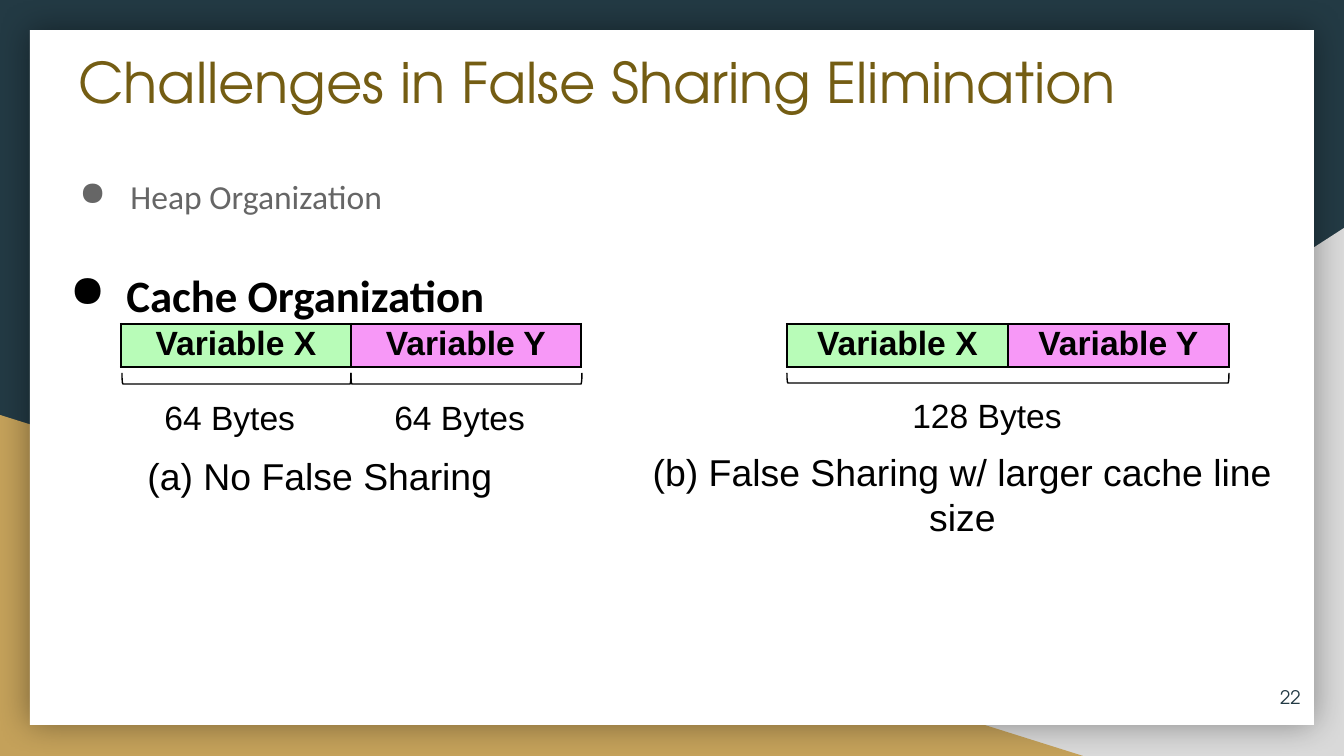
"""Build the slide on false sharing elimination and cache organization."""
import lxml.etree
import pptx
import pptx.dml.color
import pptx.enum.shapes
import pptx.enum.text
import pptx.oxml
import pptx.oxml.ns
import pptx.util

PX = 914400 / 134.4
SLIDE_SIZE = (1344, 756)
COLORS = {
    "navy": "233A44", "silver": "D9D9D9", "gold": "C4A15A", "white": "FFFFFF",
    "title": "745D13", "gray": "666666", "black": "000000",
    "green": "B8FCB8", "pink": "F798F7",
}
HEADING_FONT, BODY_FONT, DIAGRAM_FONT = "TeX Gyre Adventor", "Calibri", "Arial"
TITLE = ("Challenges in False Sharing Elimination", (65, 34, 1103, 95))
SLIDE_NUMBER = ("22", (1234, 668, 80, 58))
BULLETS = [
    ("Heap Organization", (50, 142, 410, 67), 18, "gray", False, 0.38),
    ("Cache Organization", (46, 227, 516, 82), 24, "black", True, 0.42),
]
VARIABLES = [("Variable X", "green"), ("Variable Y", "pink")]
TABLES = [(121, 324, 230), (787, 324, 221)]
ROW_HEIGHT = 36
BRACKETS = [(122, 373, 229, 11), (351, 373, 231, 11), (787, 373, 442, 10)]
LABELS = [
    ("128 Bytes", (911, 394, 194, 43), 18, "LEFT"),
    ("64 Bytes", (163, 396, 148, 43), 18, "LEFT"),
    ("64 Bytes", (393, 396, 148, 43), 18, "LEFT"),
    ("(a) No False Sharing", (112, 452, 416, 48), 20, "CENTER"),
    ("(b) False Sharing w/ larger cache line size", (621, 448, 683, 93), 20, "CENTER"),
]


def emu(*lengths):
    return [pptx.util.Emu(round(length * PX)) for length in lengths]


def rgb(color):
    return pptx.dml.color.RGBColor.from_string(COLORS[color])


def add_xml(parent, xml):
    element = pptx.oxml.parse_xml(xml.replace(">", f" {pptx.oxml.ns.nsdecls('a')}>", 1))
    parent.append(element)


def add_panel(slide, preset, box, color):
    shape = slide.shapes.add_shape(preset, *emu(*box))
    shape.shadow.inherit = False
    shape.fill.solid()
    shape.fill.fore_color.rgb = rgb(color)
    shape.line.fill.background()
    return shape


def style_text(paragraph, font, size, color, bold=False, align="LEFT"):
    paragraph.alignment = pptx.enum.text.PP_ALIGN[align]
    for run in paragraph.runs:
        run.font.name = font
        run.font.size = pptx.util.Pt(size)
        run.font.bold = bold
        run.font.color.rgb = rgb(color)


def set_margins(target, inches):
    margin = pptx.util.Inches(inches)
    target.margin_left = target.margin_right = margin
    target.margin_top = target.margin_bottom = margin


def add_text(slide, text, box, font, size, color, bold=False, align="LEFT", margin=0.1):
    text_frame = slide.shapes.add_textbox(*emu(*box)).text_frame
    text_frame.word_wrap = True
    set_margins(text_frame, margin)
    text_frame.text = text
    style_text(text_frame.paragraphs[0], font, size, color, bold, align)
    return text_frame


def add_bullet(slide, text, box, size, color, bold, hanging):
    paragraph = add_text(slide, text, box, BODY_FONT, size, color, bold).paragraphs[0]
    paragraph.line_spacing = 1.5
    properties = paragraph._p.get_or_add_pPr()
    properties.set("marL", str(pptx.util.Inches(0.5)))
    properties.set("indent", str(-pptx.util.Inches(hanging)))
    add_xml(properties, f'<a:buClr><a:srgbClr val="{COLORS[color]}"/></a:buClr>')
    add_xml(properties, '<a:buChar char="●"></a:buChar>')


def add_variable_table(slide, left, top, column_width):
    frame = slide.shapes.add_table(
        1, len(VARIABLES), *emu(left, top, column_width * len(VARIABLES), ROW_HEIGHT))
    for cell, (name, color) in zip(frame.table.iter_cells(), VARIABLES):
        cell.text = name
        style_text(cell.text_frame.paragraphs[0], DIAGRAM_FONT, 18, "black", True, "CENTER")
        set_margins(cell, 0.01)
        properties = cell._tc.get_or_add_tcPr()
        for side in ("lnL", "lnR", "lnT", "lnB"):
            add_xml(properties, f'<a:{side} w="{pptx.util.Pt(1.5)}"><a:solidFill>'
                                f'<a:srgbClr val="{COLORS["black"]}"/></a:solidFill></a:{side}>')
        cell.fill.solid()
        cell.fill.fore_color.rgb = rgb(color)


def add_bracket(slide, left, top, width, height):
    shift = (width - height) / 2
    shape = slide.shapes.add_shape(
        pptx.enum.shapes.MSO_SHAPE.LEFT_BRACKET, *emu(left + shift, top - shift, height, width))
    shape.rotation = 270
    shape.shadow.inherit = False
    shape.fill.background()
    shape.line.color.rgb = rgb("black")
    shape.line.width = pptx.util.Pt(0.75)


def add_backdrop(slide):
    slide.background.fill.solid()
    slide.background.fill.fore_color.rgb = rgb("navy")
    presets = pptx.enum.shapes.MSO_SHAPE
    triangle = add_panel(slide, presets.RIGHT_TRIANGLE, (527, 228, 817, 528), "silver")
    triangle._element.spPr.xfrm.set("flipH", "1")
    add_panel(slide, presets.RIGHT_TRIANGLE, (0, 415, 1083, 341), "gold")
    card = add_panel(slide, presets.RECTANGLE, (30, 30, 1284, 695), "white")
    effects = card._element.spPr.find(pptx.oxml.ns.qn("a:effectLst"))
    add_xml(effects, f'<a:outerShdw blurRad="{pptx.util.Pt(18)}" dist="0" algn="ctr" rotWithShape="0">'
                     f'<a:srgbClr val="{COLORS["black"]}"><a:alpha val="40000"/></a:srgbClr></a:outerShdw>')


def main():
    presentation = pptx.Presentation()
    presentation.slide_width, presentation.slide_height = emu(*SLIDE_SIZE)
    slide = presentation.slides.add_slide(presentation.slide_layouts[6])
    add_backdrop(slide)
    number = add_text(slide, *SLIDE_NUMBER, HEADING_FONT, 10, "navy", align="RIGHT")
    number.vertical_anchor = pptx.enum.text.MSO_ANCHOR.MIDDLE
    for bullet in BULLETS:
        add_bullet(slide, *bullet)
    for table in TABLES:
        add_variable_table(slide, *table)
    for bracket in BRACKETS:
        add_bracket(slide, *bracket)
    for text, box, size, align in LABELS:
        add_text(slide, text, box, DIAGRAM_FONT, size, "black", align=align, margin=0.01)
    add_text(slide, *TITLE, HEADING_FONT, 30, "title")
    presentation.save("out.pptx")


if __name__ == "__main__":
    main()
